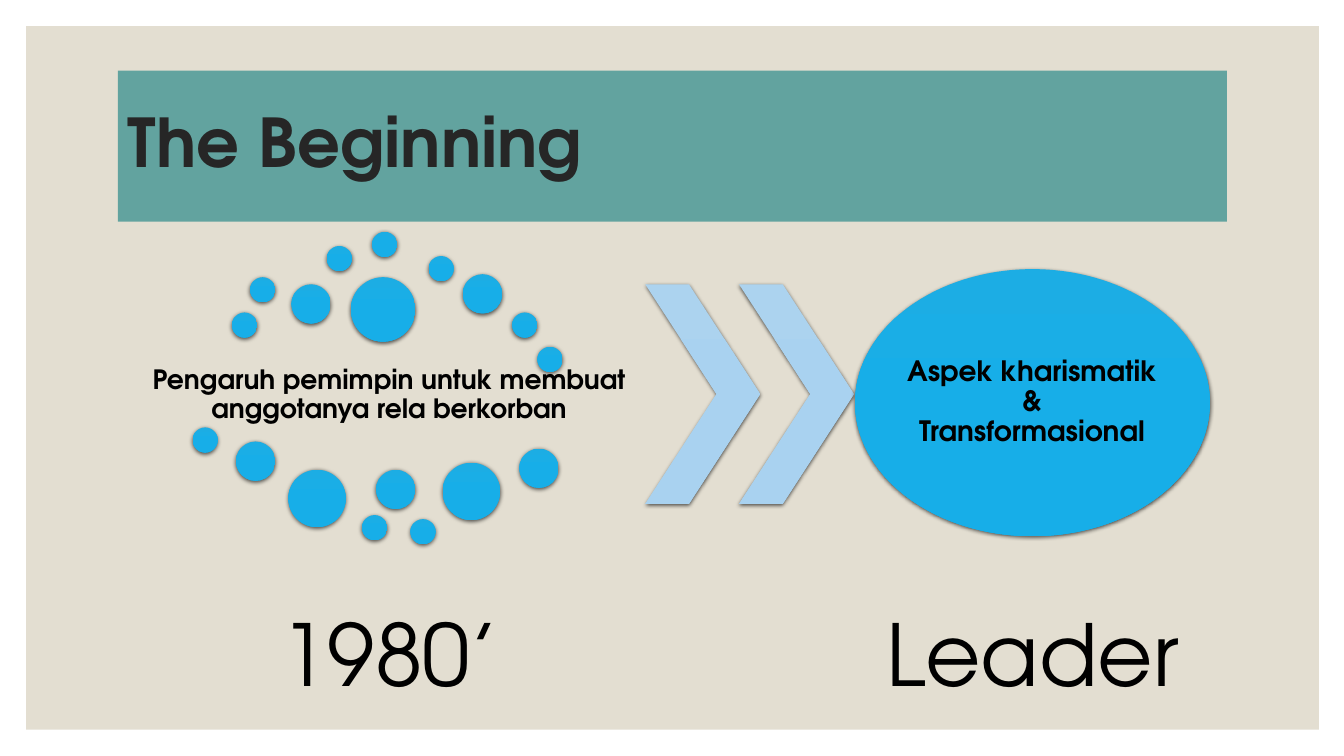
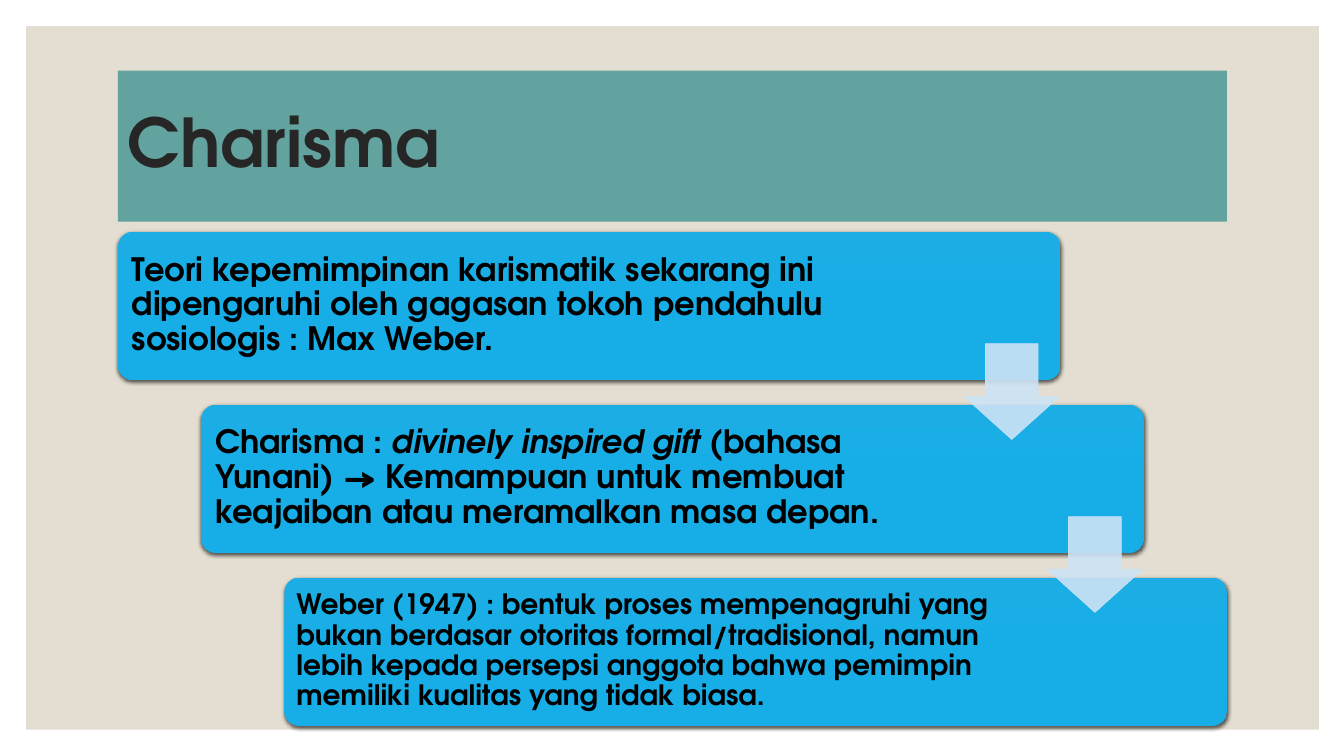
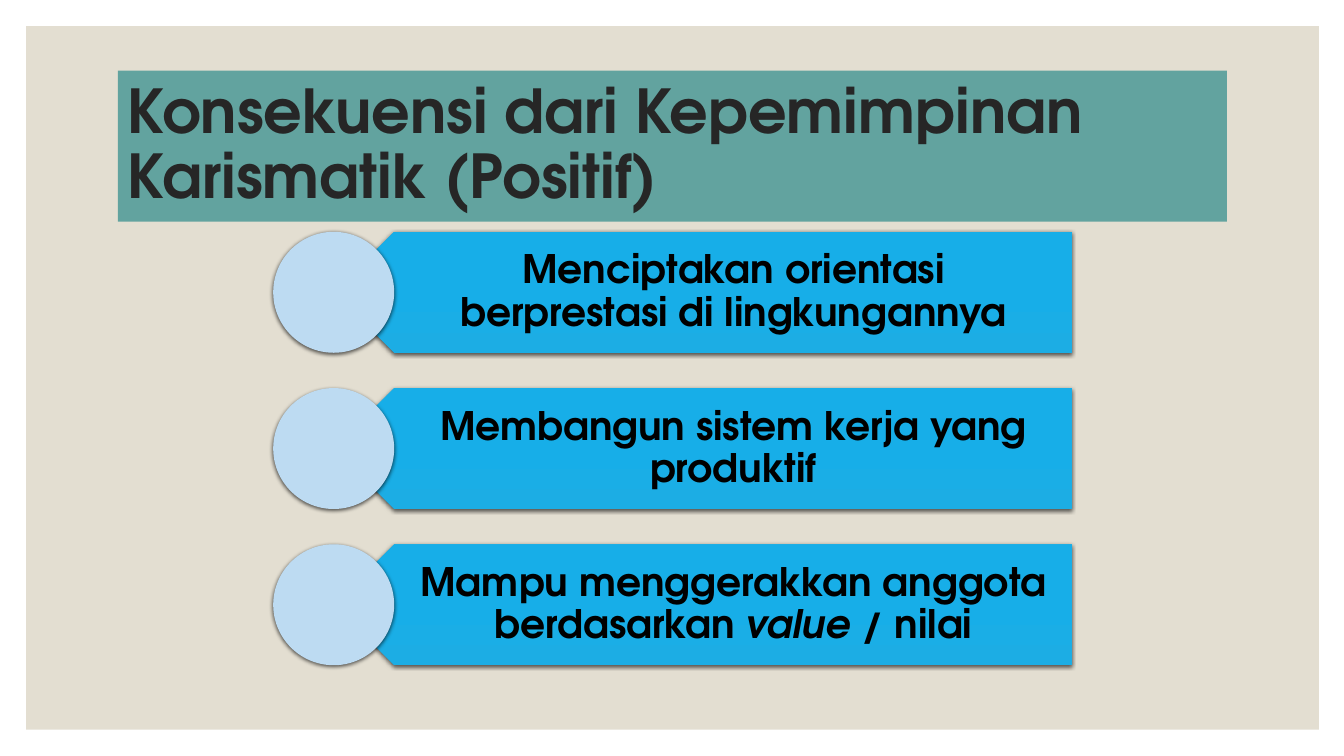
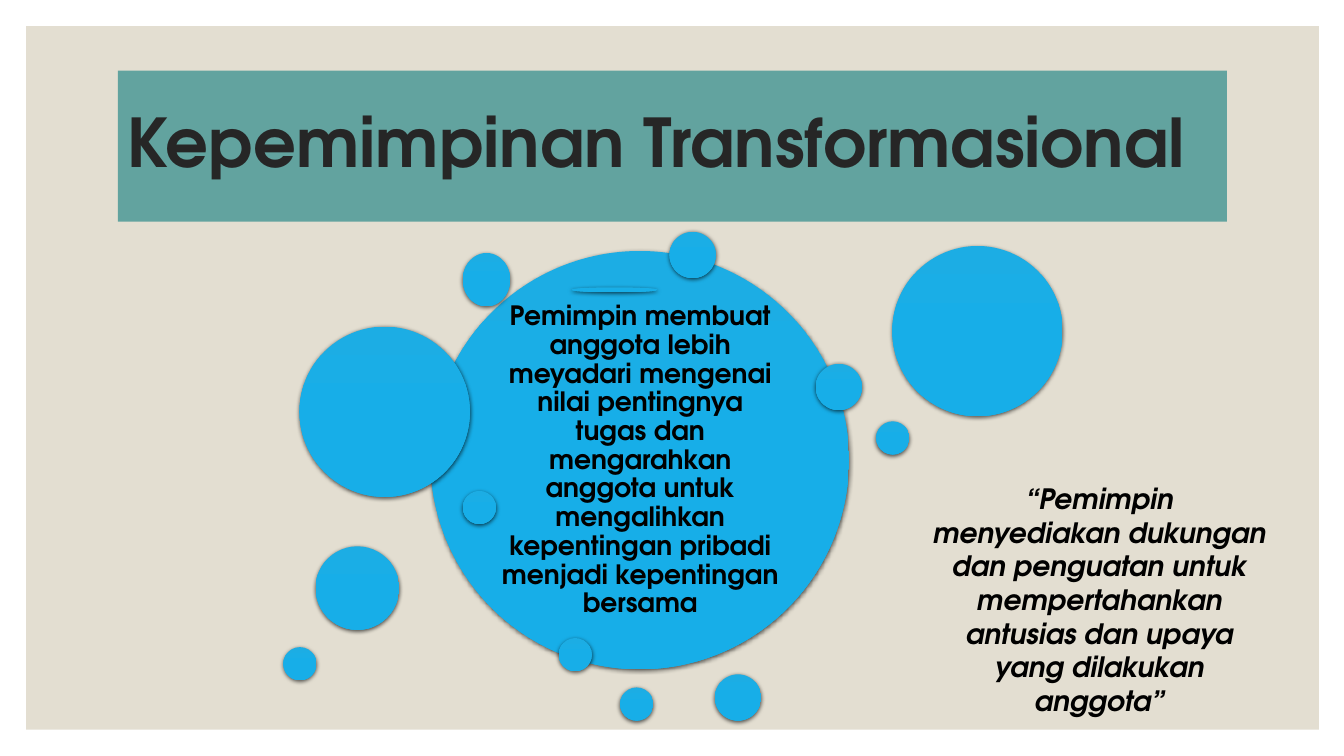
from lxml.etree import SubElement
from pptx import Presentation
from pptx.dml.color import RGBColor
from pptx.enum.shapes import MSO_SHAPE as Preset
from pptx.enum.text import MSO_ANCHOR as Anchor, MSO_AUTO_SIZE as AutoSize, PP_ALIGN as Align
from pptx.oxml.ns import qn
from pptx.util import Inches, Pt

FONT = "TeX Gyre Adventor"
PANEL, TITLE_BAND, TITLE_INK, INK = "E3DED1", "62A39F", "262626", "000000"
BLUE, CHEVRON_BLUE = ("1CADE4", "17AEE8"), ("ACD3EF", "A9D2F0")
ARROW_BLUE, MARKER_BLUE = "CDE3F5", "BDDBF2"
MARGIN, CONTENT_W, CONTENT_TOP = 1.17, 11, 2.3

# Text between asterisks is italic.
BEGINNING = {
    "title": "The Beginning",
    "influence": "Pengaruh pemimpin untuk membuat anggotanya rela berkorban",
    "aspects": "Aspek kharismatik & Transformasional",
    "captions": [("1980’", 2.31), ("Leader", 8.68)],
    "chevrons": [6.4, 7.33],
    # dot diameter: left and top of each dot
    "dots": {
        0.25: [(2.3, 3.1), (2.48, 2.75), (3.24, 2.44), (3.69, 2.3), (4.25, 2.54),
               (5.08, 3.1), (5.33, 3.44), (1.91, 4.24), (3.59, 5.11), (4.07, 5.15)],
        0.39: [(2.89, 2.82), (4.59, 2.72), (2.34, 4.38), (3.73, 4.66), (5.15, 4.45)],
        0.57: [(2.86, 4.66), (4.39, 4.59)],
        0.64: [(3.48, 2.75)],
    },
}
CHARISMA = {
    "title": "Charisma",
    # text, size, text width, inset
    "steps": [
        ("Teori kepemimpinan karismatik sekarang ini dipengaruhi oleh gagasan "
         "tokoh pendahulu sosiologis : Max Weber.", 23, 7.77, 0.1),
        ("Charisma : *divinely inspired gift *(bahasa Yunani) → Kemampuan untuk "
         "membuat keajaiban atau meramalkan masa depan.", 23, 7.48, 0.1),
        ("Weber (1947) : bentuk proses mempenagruhi yang bukan berdasar otoritas "
         "formal/tradisional, namun lebih kepada persepsi anggota bahwa pemimpin "
         "memiliki kualitas yang tidak biasa.", 20, 7.48, 0.08),
    ],
}
CONSEQUENCES = {
    "title": "Konsekuensi dari Kepemimpinan Karismatik (Positif)",
    "items": [
        "Menciptakan orientasi berprestasi di lingkungannya",
        "Membangun sistem kerja yang produktif",
        "Mampu menggerakkan anggota berdasarkan *value* / nilai",
    ],
}
TRANSFORMATIONAL = {
    "title": "Kepemimpinan Transformasional",
    "core": "Pemimpin membuat anggota lebih meyadari mengenai nilai pentingnya tugas "
            "dan mengarahkan anggota untuk mengalihkan kepentingan pribadi menjadi "
            "kepentingan bersama",
    "quote": "*“Pemimpin menyediakan dukungan dan penguatan untuk mempertahankan "
             "antusias dan upaya yang dilakukan anggota”*",
    "dots": {
        1.69: [(2.97, 3.24), (8.85, 2.44)],
        0.83: [(3.13, 5.42)],
        0.46: [(6.64, 2.3), (7.09, 6.69), (8.09, 3.61)],
        0.33: [(5.54, 6.33), (8.69, 4.18), (4.59, 4.87), (2.81, 6.42), (6.15, 6.82)],
    },
    "ovals": [(4.59, 2.51, 0.47, 0.53), (5.67, 2.85, 0.85, 0.05)],
}


def rgb(color):
    return RGBColor.from_string(color)


def add_shadow(shape):
    outer = SubElement(shape._element.spPr.find(qn("a:effectLst")), qn("a:outerShdw"),
                       blurRad=str(Pt(3)), dist=str(Pt(1)), dir="5400000",
                       algn="ctr", rotWithShape="0")
    black = SubElement(outer, qn("a:srgbClr"), val=INK)
    SubElement(black, qn("a:alpha"), val="63000")


def add_figure(slide, preset, box, fill, shadow=True, adjust=()):
    """Add a borderless shape; a pair of colours as fill makes a vertical gradient."""
    shape = slide.shapes.add_shape(preset, *map(Inches, box))
    shape.shadow.inherit = False
    shape.line.fill.background()
    for i, value in enumerate(adjust):
        shape.adjustments[i] = value
    if isinstance(fill, tuple):
        shape.fill.gradient()
        shape.fill.gradient_angle = 270
        for stop, color, position in zip(shape.fill.gradient_stops, fill, (0, 0.5)):
            stop.color.rgb = rgb(color)
            stop.position = position
    else:
        shape.fill.solid()
        shape.fill.fore_color.rgb = rgb(fill)
    if shadow:
        add_shadow(shape)
    return shape


def write(shape, text, size, bold=True, color=INK, align=Align.CENTER,
          insets=(0.1, 0.05, 0.1, 0.05), spacing=0.9, anchor=Anchor.MIDDLE):
    frame = shape.text_frame
    frame.word_wrap = True
    frame.vertical_anchor = anchor
    (frame.margin_left, frame.margin_top,
     frame.margin_right, frame.margin_bottom) = map(Inches, insets)
    paragraph = frame.paragraphs[0]
    paragraph.alignment = align
    paragraph.line_spacing = spacing
    for i, part in enumerate(text.split("*")):
        if part:
            run = paragraph.add_run()
            run.text = part
            font = run.font
            font.name, font.size, font.bold = FONT, Pt(size), bold
            font.italic = i % 2 == 1
            font.color.rgb = rgb(color)


def add_text(slide, box, text, size, **style):
    label = slide.shapes.add_textbox(*map(Inches, box))
    write(label, text, size, **style)
    return label


def add_dots(slide, dots):
    for diameter, places in dots.items():
        for left, top in places:
            add_figure(slide, Preset.OVAL, (left, top, diameter, diameter), BLUE)


def start_slide(prs, title, size=48):
    slide = prs.slides.add_slide(prs.slide_layouts[6])
    add_figure(slide, Preset.RECTANGLE, (0.26, 0.26, 12.82, 6.98), PANEL, shadow=False)
    band = add_figure(slide, Preset.RECTANGLE, (MARGIN, 0.7, CONTENT_W, 1.5),
                      TITLE_BAND, shadow=False)
    write(band, title, size, color=TITLE_INK, align=Align.LEFT)
    return slide


def build_beginning(prs):
    slide = start_slide(prs, BEGINNING["title"])
    add_text(slide, (1.33, 3.41, 5.06, 1.03), BEGINNING["influence"], 19, insets=[0.03] * 4)
    add_dots(slide, BEGINNING["dots"])
    for left in BEGINNING["chevrons"]:
        add_figure(slide, Preset.CHEVRON, (left, 2.82, 1.14, 2.18), CHEVRON_BLUE,
                   adjust=[0.62])
    add_figure(slide, Preset.OVAL, (8.48, 2.67, 3.52, 2.65), BLUE)
    add_text(slide, (8.99, 3.05, 2.49, 1.88), BEGINNING["aspects"], 20, insets=[0] * 4)
    for caption, left in BEGINNING["captions"]:
        add_text(slide, (left, 5.58, 3.12, 1.92), caption, 61, bold=False, insets=[0.08] * 4)


def add_step_arrow(slide, left, top):
    arrow = add_figure(slide, Preset.DOWN_ARROW, (left, top, 0.95, 0.95), ARROW_BLUE,
                       shadow=False, adjust=[0.55, 0.45])
    arrow.line.color.rgb = rgb(ARROW_BLUE)
    arrow.line.width = Pt(0.5)
    for color in arrow._element.spPr.iter(qn("a:srgbClr")):
        SubElement(color, qn("a:alpha"), val="90000")


def build_charisma(prs):
    slide = start_slide(prs, CHARISMA["title"])
    steps = CHARISMA["steps"]
    width, height, bottom = 9.35, 1.47, 7.2
    shift = (CONTENT_W - width) / (len(steps) - 1)
    drop = (bottom - CONTENT_TOP - height) / (len(steps) - 1)
    corners = [(MARGIN + i * shift, CONTENT_TOP + i * drop) for i in range(len(steps))]
    for (left, top), (text, size, text_width, inset) in zip(corners, steps):
        add_figure(slide, Preset.ROUNDED_RECTANGLE, (left, top, width, height), BLUE,
                   adjust=[0.1])
        add_text(slide, (left + 0.04, top + 0.04, text_width, 1.38), text, size,
                 align=Align.LEFT, insets=[inset] * 4)
    for left, top in corners[:-1]:
        add_step_arrow(slide, left + width - 0.96, top + 1.11)


def build_consequences(prs):
    slide = start_slide(prs, CONSEQUENCES["title"], 43.2)
    height, pitch = 1.2, 1.55
    for i, item in enumerate(CONSEQUENCES["items"]):
        top = CONTENT_TOP + i * pitch
        banner = add_figure(slide, Preset.PENTAGON, (3.31, top, 7.32, height), BLUE)
        banner.rotation = 180
        add_text(slide, (3.61, top, 7.02, height), item, 28,
                 insets=(0.53, 0.12, 0.22, 0.12))
        add_figure(slide, Preset.OVAL, (2.71, top, height, height), MARKER_BLUE)


def build_transformational(prs):
    slide = start_slide(prs, TRANSFORMATIONAL["title"])
    add_figure(slide, Preset.OVAL, (4.27, 2.49, 4.15, 4.15), BLUE)
    add_text(slide, (4.88, 3.1, 2.94, 2.94), TRANSFORMATIONAL["core"], 19, insets=[0.08] * 4)
    add_dots(slide, TRANSFORMATIONAL["dots"])
    for box in TRANSFORMATIONAL["ovals"]:
        add_figure(slide, Preset.OVAL, box, BLUE)
    quote = add_text(slide, (9.11, 4.73, 3.59, 2.46), TRANSFORMATIONAL["quote"], 20,
                     spacing=1.0, anchor=Anchor.TOP)
    quote.text_frame.auto_size = AutoSize.SHAPE_TO_FIT_TEXT


def main():
    prs = Presentation()
    prs.slide_width, prs.slide_height = Inches(13.33), Inches(7.5)
    for build in (build_beginning, build_charisma, build_consequences,
                  build_transformational):
        build(prs)
    prs.save("out.pptx")


if __name__ == "__main__":
    main()
